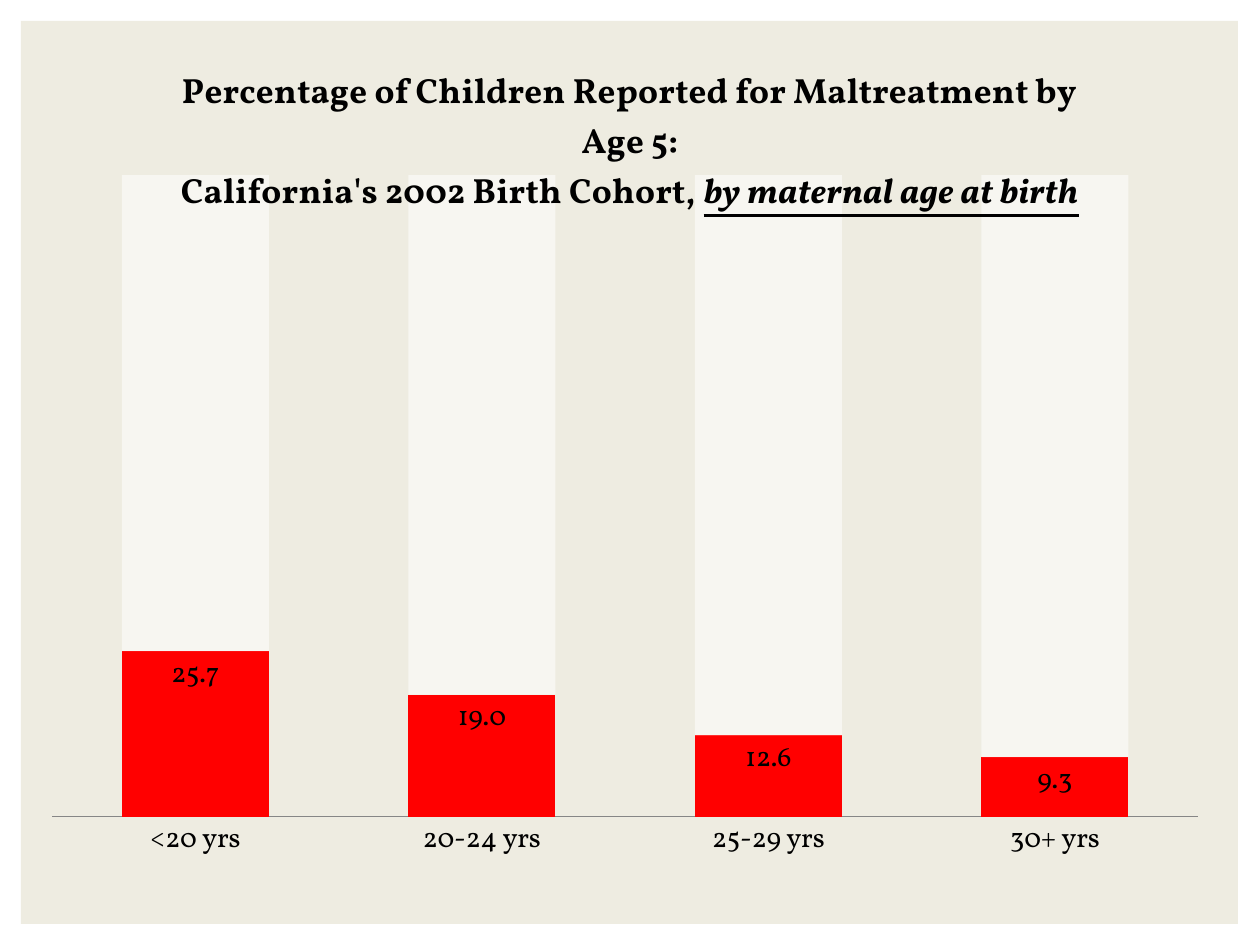
from dataclasses import dataclass

import pptx
import pptx.chart.data
import pptx.dml.color
import pptx.enum.chart
import pptx.enum.shapes
import pptx.oxml
import pptx.oxml.ns
import pptx.util

RGB = pptx.dml.color.RGBColor.from_string
ENUM = pptx.enum.chart
NS = pptx.oxml.ns.nsdecls("c", "a")


@dataclass(frozen=True)
class Theme:
    font: str = "Vollkorn"
    panel: str = "EEECE1"
    ink: str = "000000"
    axis: str = "868686"
    bar: str = "FF0000"
    rest: str = "FFFFFF"
    alpha: int = 54
    head: int = 20
    label: int = 16


THEME = Theme()
AGES = ["<20 yrs", "20-24 yrs", "25-29 yrs", "30+ yrs"]
RATES = [25.7, 19.0, 12.6, 9.3]
OTHERS = [74, 81, 87, 91]


def px(count):
    return pptx.util.Emu(round(count * 914400 / 126))


def style(font, size):
    font.name = THEME.font
    font.size = pptx.util.Pt(size)
    font.color.rgb = RGB(THEME.ink)


def add_panel(slide, box):
    panel = slide.shapes.add_shape(
        pptx.enum.shapes.MSO_SHAPE.RECTANGLE, *map(px, box))
    panel.shadow.inherit = False
    panel.fill.solid()
    panel.fill.fore_color.rgb = RGB(THEME.panel)
    panel.line.fill.background()


def add_title(chart):
    frame = chart.chart_title.text_frame
    first = frame.paragraphs[0]
    first.add_run().text = (
        "Percentage of Children Reported for Maltreatment by Age 5:")
    second = frame.add_paragraph()
    second.add_run().text = "California's 2002 Birth Cohort, "
    group = second.add_run()
    group.text = "by maternal age at birth"
    group.font.italic = group.font.underline = True
    for line in (first, second):
        style(line.font, THEME.head)
        line.font.bold = True
        for run in line.runs:
            style(run.font, THEME.head)
            run.font.bold = True
    chart.chart_title.include_in_layout = False


def set_plot(chart, x, y, w, h):
    """Fix the inner plot area, in fractions of the chart."""
    area = chart.element.chart.plotArea
    for old in area.findall(pptx.oxml.ns.qn("c:layout")):
        area.remove(old)
    sides = "".join(f'<c:{name} val="{value}"/>' for name, value in (
        ("xMode", "edge"), ("yMode", "edge"),
        ("x", x), ("y", y), ("w", w), ("h", h)))
    area.insert(0, pptx.oxml.parse_xml(
        f'<c:layout {NS}><c:manualLayout><c:layoutTarget val="inner"/>'
        f'{sides}</c:manualLayout></c:layout>'))


def set_axes(chart):
    ages = chart.category_axis
    ages.major_tick_mark = ages.minor_tick_mark = ENUM.XL_TICK_MARK.NONE
    ages.format.line.color.rgb = RGB(THEME.axis)
    style(ages.tick_labels.font, THEME.label)
    rates = chart.value_axis
    rates.has_major_gridlines = False
    rates.visible = False


def set_bars(plot):
    plot.gap_width = 95
    plot.overlap = 100
    plot.vary_by_categories = False
    known, rest = plot.series
    for series, color in ((known, THEME.bar), (rest, THEME.rest)):
        series.format.fill.solid()
        series.format.fill.fore_color.rgb = RGB(color)
        series.format.line.fill.background()
    tint = rest.format.fill._xPr.find(".//" + pptx.oxml.ns.qn("a:srgbClr"))
    tint.append(pptx.oxml.parse_xml(
        f'<a:alpha {NS} val="{THEME.alpha * 1000}"/>'))
    labels = known.data_labels
    labels.show_value = True
    labels.number_format = "0.0"
    labels.number_format_is_linked = False
    labels.position = ENUM.XL_LABEL_POSITION.INSIDE_END
    style(labels.font, THEME.label)


def add_rates(slide, box):
    data = pptx.chart.data.CategoryChartData(number_format="0.0")
    data.categories = AGES
    data.add_series("Series 1", RATES)
    data.add_series("Series 2", OTHERS)
    chart = slide.shapes.add_chart(
        ENUM.XL_CHART_TYPE.COLUMN_STACKED_100, *map(px, box), data).chart
    chart.has_legend = False
    style(chart.font, 10)
    add_title(chart)
    set_plot(chart, 0.016, 0.157, 0.96, 0.739)
    set_axes(chart)
    set_bars(chart.plots[0])


def main():
    deck = pptx.Presentation()
    deck.slide_width, deck.slide_height = px(1260), px(945)
    slide = deck.slides.add_slide(deck.slide_layouts[6])
    add_panel(slide, (21, 21, 1217, 903))
    add_rates(slide, (33, 39, 1194, 868))
    deck.save("out.pptx")


if __name__ == "__main__":
    main()
